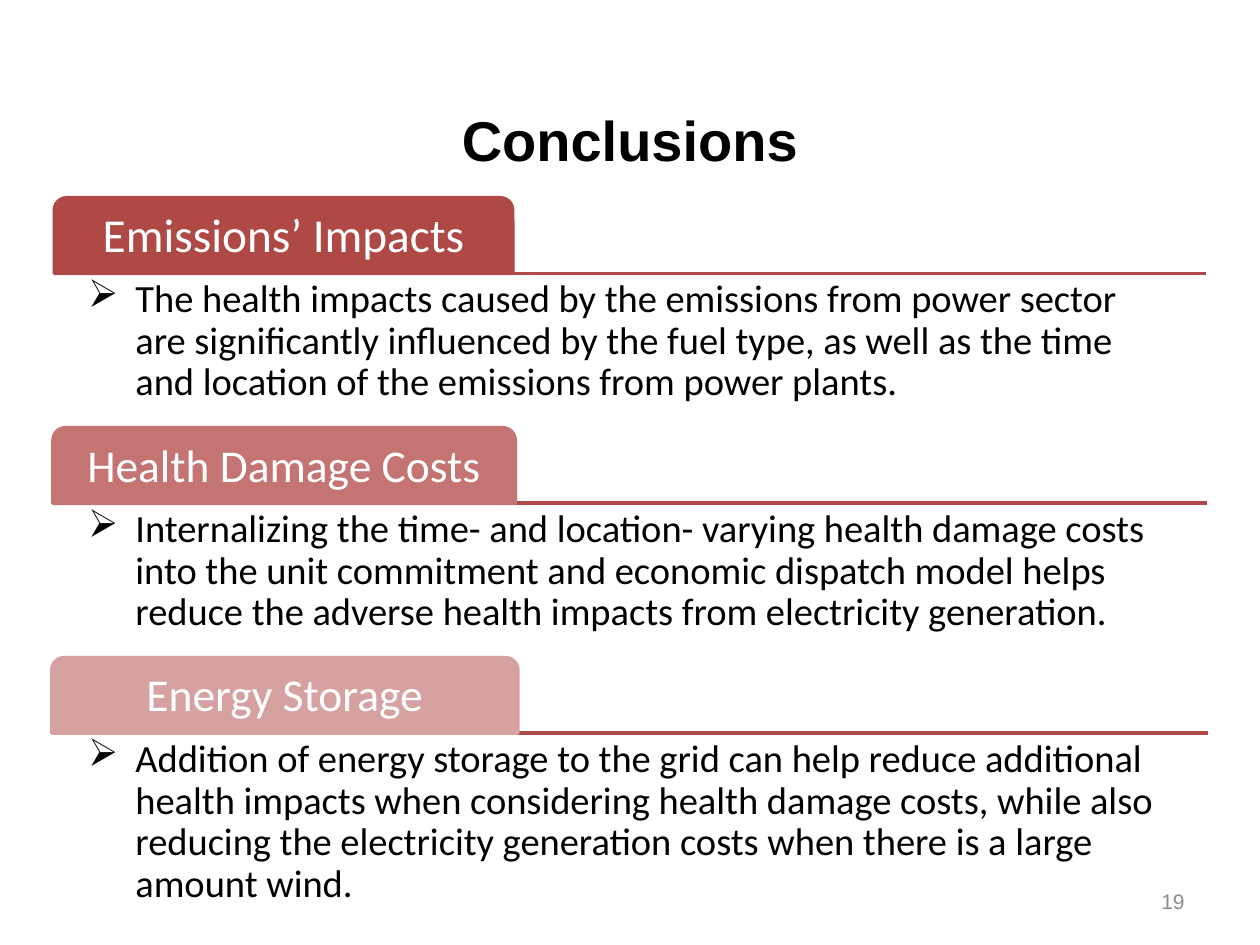
from lxml import etree
from pptx import Presentation
from pptx import util as u
from pptx.dml.color import RGBColor
from pptx.enum import shapes, text
from pptx.oxml import ns

RED = RGBColor(0xAE, 0x49, 0x46)
ROSE = RGBColor(0xC4, 0x74, 0x72)
PINK = RGBColor(0xD6, 0xA2, 0xA1)
WHITE = RGBColor(0xFF, 0xFF, 0xFF)
BLACK = RGBColor(0, 0, 0)
GRAY = RGBColor(0x8C, 0x8C, 0x8C)

SECTIONS = [
    ("Emissions’ Impacts", 27, RED,
     "The health impacts caused by the emissions from power sector are "
     "significantly influenced by the fuel type, as well as the time and "
     "location of the emissions from power plants."),
    ("Health Damage Costs", 26, ROSE,
     "Internalizing the time- and location- varying health damage costs into "
     "the unit commitment and economic dispatch model helps reduce the "
     "adverse health impacts from electricity generation."),
    ("Energy Storage", 26, PINK,
     "Addition of energy storage to the grid can help reduce additional "
     "health impacts when considering health damage costs, while also "
     "reducing the electricity generation costs when there is a large amount "
     "wind."),
]
TOP, PITCH, TAB_HEIGHT = 113, 131.4, 43.2


class SlideBuilder:
    """Holds the current slide and its style; lengths are in points."""

    line_width = 2
    bullet_indent = 27

    def __init__(self, slide):
        self.s = slide

    def fill_text(self, sp, words, margins, fmt, anchor, align, spacing=1.0):
        tf = sp.text_frame
        tf.word_wrap = True
        tf.vertical_anchor = anchor
        for side, size in zip(("left", "top", "right", "bottom"), margins):
            setattr(tf, f"margin_{side}", u.Pt(size))
        p = tf.paragraphs[0]
        p.alignment = align
        p.line_spacing = spacing
        r = p.add_run()
        r.text = words
        fmt = dict(fmt)
        r.font.color.rgb = fmt.pop("color")
        for name, value in fmt.items():
            setattr(r.font, name, value)
        return p

    def title(self, words, box):
        sp = self.s.shapes.title
        sp.left, sp.top, sp.width, sp.height = map(u.Pt, box)
        fmt = {"name": "Arial", "size": u.Pt(32), "bold": True, "color": BLACK}
        self.fill_text(sp, words, (7.2, 3.6, 7.2, 3.6), fmt,
                       text.MSO_ANCHOR.MIDDLE, text.PP_ALIGN.CENTER)

    def page_number(self, words, box):
        sp = self.s.shapes.add_textbox(*map(u.Pt, box))
        fmt = {"name": "Arial", "size": u.Pt(12), "color": GRAY}
        self.fill_text(sp, words, (7.2, 3.6, 7.2, 3.6), fmt,
                       text.MSO_ANCHOR.MIDDLE, text.PP_ALIGN.RIGHT)

    def rule(self, left, right, y):
        ends = map(u.Pt, (left, y, right, y))
        cxn = self.s.shapes.add_connector(shapes.MSO_CONNECTOR.STRAIGHT, *ends)
        cxn.line.color.rgb = RED
        cxn.line.width = u.Pt(self.line_width)
        etree.SubElement(cxn._element.spPr, ns.qn("a:effectLst"))

    def tab(self, words, size, color, box):
        sp = self.s.shapes.add_shape(
            shapes.MSO_SHAPE.ROUND_2_SAME_RECTANGLE, *map(u.Pt, box))
        sp.shadow.inherit = False
        sp.fill.solid()
        sp.fill.fore_color.rgb = color
        sp.line.color.rgb = color
        sp.line.width = u.Pt(self.line_width)
        fmt = {"name": "Calibri", "size": u.Pt(size), "color": WHITE}
        self.fill_text(sp, words, (4, 4, 4, 4), fmt,
                       text.MSO_ANCHOR.MIDDLE, text.PP_ALIGN.CENTER, 0.9)

    def bullet(self, words, box):
        sp = self.s.shapes.add_textbox(*map(u.Pt, box))
        fmt = {"name": "Calibri", "size": u.Pt(22), "color": BLACK}
        p = self.fill_text(sp, words, (3.6,) * 4, fmt,
                           text.MSO_ANCHOR.TOP, text.PP_ALIGN.LEFT, 0.9)
        pPr = p._p.get_or_add_pPr()
        pPr.set("marL", str(u.Pt(self.bullet_indent)))
        pPr.set("indent", str(-u.Pt(self.bullet_indent)))
        etree.SubElement(pPr, ns.qn("a:buChar"), char="➢")


def main():
    prs = Presentation()
    prs.slide_width, prs.slide_height = u.Pt(720), u.Pt(540)
    b = SlideBuilder(prs.slides.add_slide(prs.slide_layouts[5]))
    b.title("Conclusions", (36, 37.5, 648, 84))
    b.page_number("19", (516, 500.5, 168, 28.75))
    for i, (heading, size, color, body) in enumerate(SECTIONS):
        top = TOP + i * PITCH
        base = top + TAB_HEIGHT
        b.rule(83.5, 689 + 0.7 * i, base)
        # Each tab is slightly wider than the one above it
        b.tab(heading, size, color,
              (31 - 0.7 * i, top, 262 + 2.2 * i, TAB_HEIGHT))
        b.bullet(body, (46.8, base, 616.3, 86.4))
    prs.save("out.pptx")


if __name__ == "__main__":
    main()
